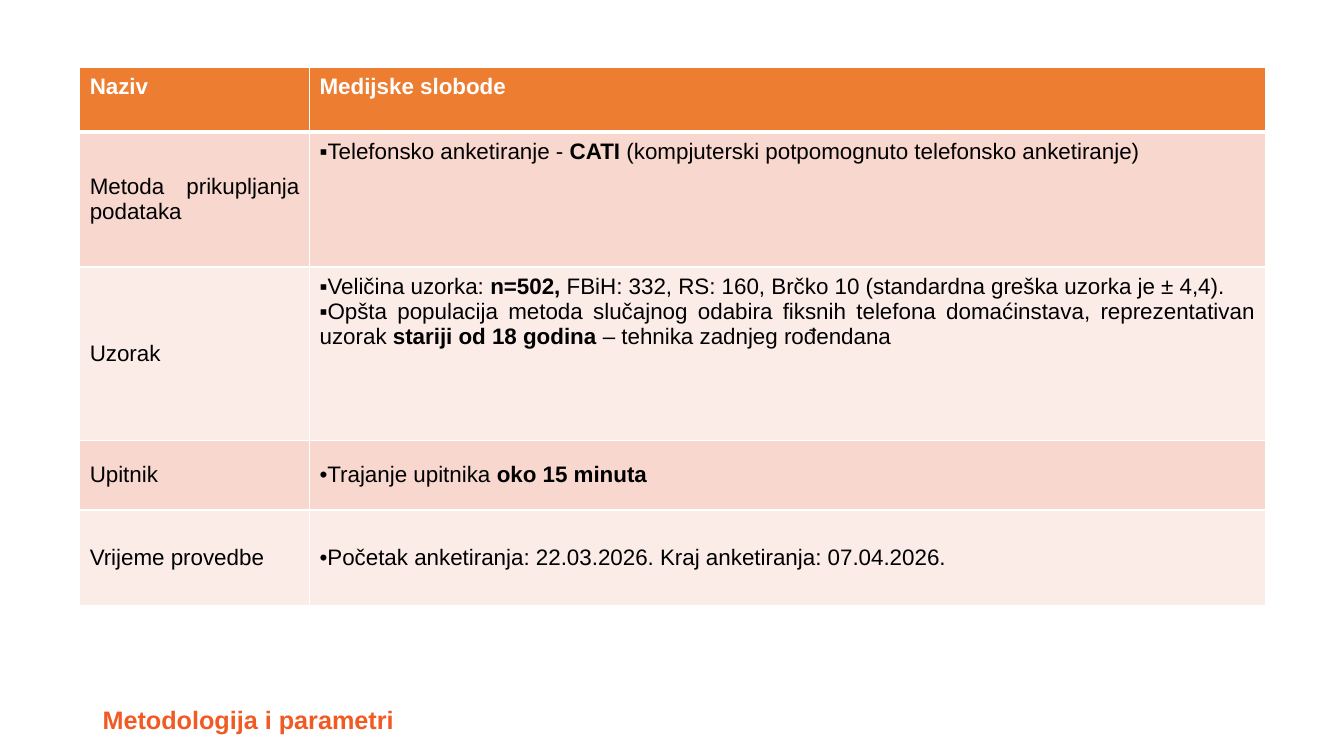
from lxml import etree
from pptx import Presentation
from pptx import util as u
from pptx.dml.color import RGBColor
from pptx.enum import text
from pptx.oxml import ns

FONT = "Arial"
WHITE = RGBColor(0xFF, 0xFF, 0xFF)
BLACK = RGBColor(0x00, 0x00, 0x00)
HEADER_ORANGE = RGBColor(0xED, 0x7D, 0x31)
CAPTION_ORANGE = RGBColor(0xF1, 0x5A, 0x23)
BANDS = [RGBColor(0xF8, 0xD7, 0xCE), RGBColor(0xFC, 0xEC, 0xE8)]

TOP, MIDDLE = text.MSO_ANCHOR.TOP, text.MSO_ANCHOR.MIDDLE
HEADER = ["Naziv", "Medijske slobode"]
# Label, bullet, anchor of the details, details (** switches bold on and off)
PARAMETERS = [
    ("Metoda prikupljanja podataka", "▪", TOP, [
        "Telefonsko anketiranje -** CATI **"
        "(kompjuterski potpomognuto telefonsko anketiranje)"]),
    ("Uzorak", "▪", TOP, [
        "Veličina uzorka: **n=502, **FBiH: 332, RS: 160, Brčko 10 "
        "(standardna greška uzorka je ± 4,4).",
        "Opšta populacija metoda slučajnog odabira fiksnih telefona domaćinstava, "
        "reprezentativan uzorak **stariji od 18 godina **– tehnika zadnjeg rođendana"]),
    ("Upitnik", "•", MIDDLE, ["Trajanje upitnika **oko 15 minuta**"]),
    ("Vrijeme provedbe", "•", MIDDLE, [
        "Početak anketiranja: 22.03.2026. Kraj anketiranja: 07.04.2026."]),
]
COLUMN_WIDTHS = [2.28, 9.48]
ROW_HEIGHTS = [0.64, 1.34, 1.72, 0.69, 0.95]


def add_bullet(paragraph, bullet):
    properties = paragraph._p.get_or_add_pPr()
    properties.set("marL", "0")
    properties.set("indent", str(u.Inches(-0.19)))
    etree.SubElement(properties, ns.qn("a:buFont")).set("typeface", FONT)
    etree.SubElement(properties, ns.qn("a:buChar")).set("char", bullet)


def write(frame, lines, size=16, color=BLACK, bold=False, align=None, bullet=None):
    for index, line in enumerate(lines):
        paragraph = frame.add_paragraph() if index else frame.paragraphs[0]
        paragraph.alignment = align
        if bullet:
            add_bullet(paragraph, bullet)
        for part, words in enumerate(line.split("**")):
            if not words:
                continue
            run = paragraph.add_run()
            run.text = words
            run.font.name = FONT
            run.font.size = u.Pt(size)
            run.font.bold = bold or part % 2 == 1
            run.font.color.rgb = color


def set_borders(cell, top=1, bottom=1):
    properties = cell._tc.get_or_add_tcPr()
    for side, width in (("L", 1), ("R", 1), ("T", top), ("B", bottom)):
        line = etree.SubElement(properties, ns.qn(f"a:ln{side}"), w=str(u.Pt(width)))
        fill = etree.SubElement(line, ns.qn("a:solidFill"))
        etree.SubElement(fill, ns.qn("a:srgbClr"), val=str(WHITE))


def fill_cell(cell, lines, fill, anchor=TOP, top=1, bottom=1, **style):
    cell.margin_left = cell.margin_right = u.Inches(0.1)
    cell.margin_top = cell.margin_bottom = u.Inches(0.07)
    cell.vertical_anchor = anchor
    set_borders(cell, top, bottom)
    cell.fill.solid()
    cell.fill.fore_color.rgb = fill
    write(cell.text_frame, lines, align=text.PP_ALIGN.JUSTIFY, **style)


def add_parameter_table(slide, left, top, width, height):
    table = slide.shapes.add_table(
        len(ROW_HEIGHTS), len(COLUMN_WIDTHS),
        u.Inches(left), u.Inches(top), u.Inches(width), u.Inches(height)).table
    for column, column_width in zip(table.columns, COLUMN_WIDTHS):
        column.width = u.Inches(column_width)
    for row, row_height in zip(table.rows, ROW_HEIGHTS):
        row.height = u.Inches(row_height)

    # Header row, with a heavier rule below it
    for column, heading in enumerate(HEADER):
        fill_cell(table.cell(0, column), [heading], HEADER_ORANGE,
                  bottom=3, color=WHITE, bold=True)

    # Banded parameter rows
    for row, (label, bullet, anchor, details) in enumerate(PARAMETERS, start=1):
        band = BANDS[(row - 1) % 2]
        rule = 3 if row == 1 else 1
        fill_cell(table.cell(row, 0), [label], band, MIDDLE, top=rule)
        fill_cell(table.cell(row, 1), details, band, anchor, top=rule, bullet=bullet)


def add_caption(slide, left, top, width, height):
    caption = slide.shapes.add_textbox(
        u.Inches(left), u.Inches(top), u.Inches(width), u.Inches(height))
    caption.text_frame.word_wrap = True
    write(caption.text_frame, ["Metodologija i parametri"],
          size=18, color=CAPTION_ORANGE, bold=True)


def main():
    deck = Presentation()
    deck.slide_width, deck.slide_height = u.Inches(13.33), u.Inches(7.5)
    slide = deck.slides.add_slide(deck.slide_layouts[6])
    add_caption(slide, 0.92, 6.94, 4.16, 0.4)
    add_parameter_table(slide, 0.79, 0.67, sum(COLUMN_WIDTHS), sum(ROW_HEIGHTS))
    deck.save("out.pptx")


if __name__ == "__main__":
    main()
